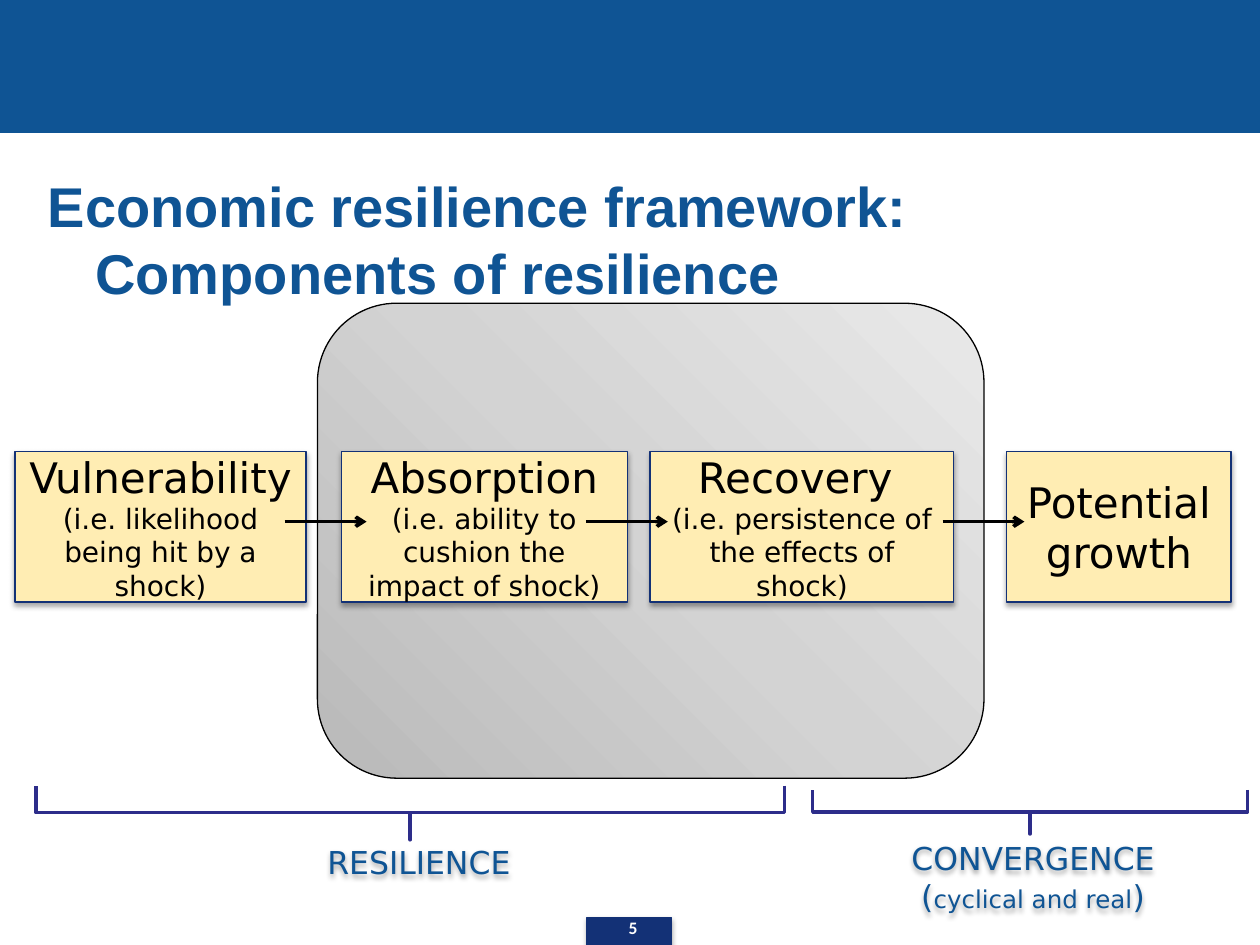
from lxml.etree import SubElement
from pptx import Presentation
from pptx.dml.color import RGBColor
from pptx.enum.shapes import MSO_CONNECTOR as Link, MSO_SHAPE as Preset
from pptx.enum.text import MSO_ANCHOR as Anchor, MSO_AUTO_SIZE as AutoSize, PP_ALIGN as Align
from pptx.oxml.ns import qn
from pptx.util import Pt

BLUE = RGBColor(0x0F, 0x54, 0x94)
NAVY = RGBColor(0x13, 0x31, 0x76)
INDIGO = RGBColor(0x2D, 0x2D, 0x8A)
CREAM = RGBColor(0xFF, 0xED, 0xB3)
BLACK = RGBColor(0, 0, 0)
WHITE = RGBColor(0xFF, 0xFF, 0xFF)
GREYS = {0: "B9B9B9", 50000: "D3D3D3", 100000: "E9E9E9"}


def add_xml(parent, tag, **attributes):
    return SubElement(parent, qn(tag), {key: str(value) for key, value in attributes.items()})


class SlideBuilder:
    font = "DejaVu Sans"

    def __init__(self, page):
        self.page = page

    def set_text(self, box, paragraphs, color, align=Align.CENTER, anchor=Anchor.MIDDLE,
                 wrap=True, **font_values):
        """Fill a box with paragraphs, each a list of (text, size) spans."""
        frame = box.text_frame
        frame.auto_size = AutoSize.NONE
        frame.word_wrap = wrap
        frame.vertical_anchor = anchor
        for index, spans in enumerate(paragraphs):
            para = frame.add_paragraph() if index else frame.paragraphs[0]
            para.alignment = align
            for text, size in spans:
                span = para.add_run()
                span.text = text
                span.font.color.rgb = color
                values = {"name": self.font, "size": Pt(size), "bold": False, **font_values}
                for key, value in values.items():
                    setattr(span.font, key, value)

    def cast_shadow(self, shape):
        shape.shadow.inherit = False
        effects = shape.element.spPr.find(qn("a:effectLst"))
        shadow = add_xml(effects, "a:outerShdw", blurRad=Pt(3.1), dist=Pt(1.8),
                         dir=5400000, rotWithShape=0)
        add_xml(add_xml(shadow, "a:srgbClr", val="000000"), "a:alpha", val=35000)

    def shape(self, preset, bounds, fill, line, width=0.75, shadow=False):
        shape = self.page.shapes.add_shape(preset, *map(Pt, bounds))
        if shadow:
            self.cast_shadow(shape)
        else:
            shape.shadow.inherit = False
        if fill is None:
            shape.fill.background()
        else:
            shape.fill.solid()
            shape.fill.fore_color.rgb = fill
        shape.line.color.rgb = line
        shape.line.width = Pt(width)
        return shape

    def shaded_panel(self, bounds):
        """Rounded panel that lightens outward from its lower left corner."""
        panel = self.shape(Preset.ROUNDED_RECTANGLE, bounds, WHITE, BLACK)
        panel.fill.gradient()
        gradient = panel.element.spPr.find(qn("a:gradFill"))
        for child in list(gradient):
            gradient.remove(child)
        stops = add_xml(gradient, "a:gsLst")
        for position, grey in GREYS.items():
            add_xml(add_xml(stops, "a:gs", pos=position), "a:srgbClr", val=grey)
        focus = add_xml(gradient, "a:path", path="circle")
        add_xml(focus, "a:fillToRect", t=100000, r=100000)

    def title(self, text, bounds):
        title = self.page.shapes.title
        title.element.getparent().append(title.element)  # in front of the panel
        for key, value in zip(("left", "top", "width", "height"), bounds):
            setattr(title, key, Pt(value))
        properties = title.text_frame.paragraphs[0]._p.get_or_add_pPr()
        properties.set("marL", str(Pt(27)))
        properties.set("indent", str(Pt(-27)))
        self.set_text(title, [[(text, 32)]], BLUE, Align.LEFT, Anchor.TOP,
                      name="Arial", bold=True)

    def stage(self, bounds, paragraphs):
        box = self.shape(Preset.RECTANGLE, bounds, CREAM, NAVY, shadow=True)
        self.set_text(box, paragraphs, BLACK)

    def arrow(self, left, top, length):
        arrow = self.page.shapes.add_connector(
            Link.STRAIGHT, Pt(left), Pt(top), Pt(left + length), Pt(top))
        arrow.line.color.rgb = BLACK
        arrow.line.width = Pt(2)
        properties = arrow.element.spPr
        add_xml(properties.find(qn("a:ln")), "a:tailEnd", type="arrow")
        add_xml(properties, "a:effectLst")

    def bracket(self, bounds):
        """Square bracket opening upward; bounds are those on the slide."""
        left, top, width, height = bounds
        shift = (width - height) / 2
        brace = self.shape(Preset.RIGHT_BRACE, (left + shift, top - shift, height, width),
                           None, INDIGO, 2)
        brace.rotation = 90
        brace.adjustments[0] = 0
        brace.adjustments[1] = 0.5

    def label(self, bounds, paragraphs, top_inset=3.6, bottom_inset=3.6):
        box = self.page.shapes.add_textbox(*map(Pt, bounds))
        self.cast_shadow(box)
        box.text_frame.margin_top = Pt(top_inset)
        box.text_frame.margin_bottom = Pt(bottom_inset)
        self.set_text(box, paragraphs, BLUE)

    def page_number(self, text, bounds):
        box = self.page.shapes.add_textbox(*map(Pt, bounds))
        self.set_text(box, [[(text, 10)]], WHITE, Align.LEFT, Anchor.TOP, False,
                      name="Calibri", bold=True)


def main():
    deck = Presentation()
    deck.slide_width, deck.slide_height = Pt(720), Pt(540)
    slide = SlideBuilder(deck.slides.add_slide(deck.slide_layouts[5]))

    slide.shape(Preset.RECTANGLE, (0, 0, 720, 75.6), BLUE, BLUE)
    slide.shape(Preset.RECTANGLE, (335.5, 524.2, 48.2, 15.8), NAVY, NAVY, shadow=True)
    slide.shaded_panel((181.4, 173.3, 380.9, 271.4))
    slide.title("Economic resilience framework: Components of resilience", (20.2, 94.3, 651.6, 46))

    stages = [
        (8.6, 166.3, [[("Vulnerability ", 24), ("(i.e. likelihood being hit by a shock)", 16)]]),
        (575.3, 128.2, [[("Potential growth", 24)]]),
        (371.5, 173.5, [[("Recovery ", 24)], [("(i.e. persistence of the effects of shock)", 16)]]),
        (195.1, 163.4, [[("Absorption ", 24), ("(i.e. ability to cushion the impact of shock)", 16)]]),
    ]
    for left, width, paragraphs in stages:
        slide.stage((left, 257.8, width, 86.2), paragraphs)
    for left in (162.7, 334.8, 538.6):
        slide.arrow(left, 298.1, 46.8)

    slide.bracket((20.5, 448.9, 427.7, 31))
    slide.bracket((464.4, 451.4, 248.4, 25.2))
    slide.label((36, 492.5, 406.8, 20.2), [[("RESILIENCE", 18)]], top_inset=0, bottom_inset=20)
    slide.label((509, 491, 162.7, 20.2),
                [[("CONVERGENCE", 18)], [("(", 18), ("cyclical and real", 14), (")", 18)]])
    slide.page_number("5", (352.1, 520.6, 19.4, 19.4))
    deck.save("out.pptx")


if __name__ == "__main__":
    main()
